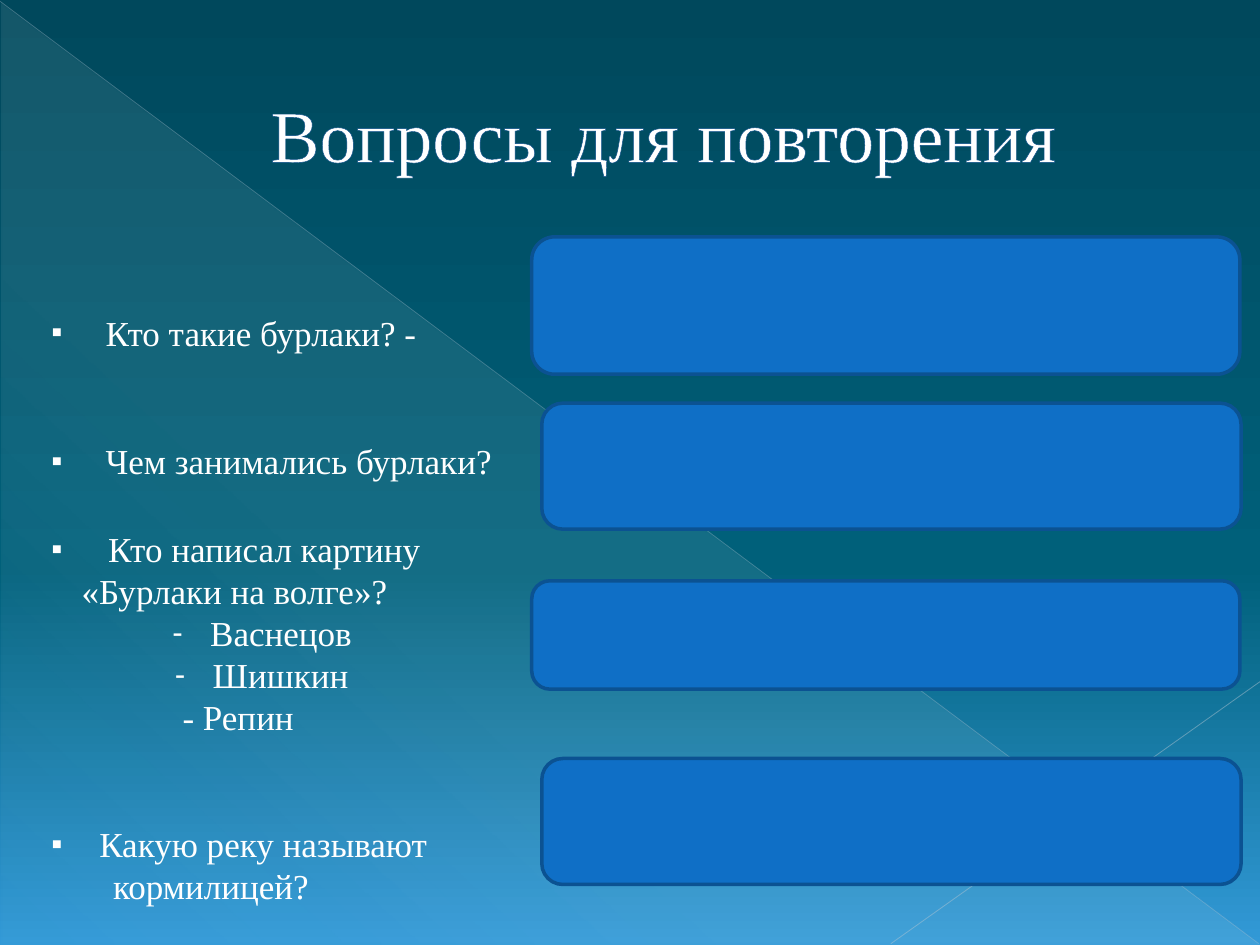
from lxml.etree import SubElement
from pptx import Presentation
from pptx.dml.color import RGBColor
from pptx.enum.shapes import MSO_CONNECTOR, MSO_SHAPE
from pptx.enum.text import MSO_ANCHOR, MSO_AUTO_SIZE, PP_ALIGN
from pptx.oxml.ns import qn
from pptx.util import Inches, Pt

WHITE = RGBColor(0xFF, 0xFF, 0xFF)
BLUE = RGBColor(0x0F, 0x6F, 0xC6)
EDGE = RGBColor(0x0B, 0x52, 0x92)
RIM = RGBColor(0x0A, 0x4D, 0x89)
NIGHT = RGBColor(0x00, 0x48, 0x5C)
TEAL = RGBColor(0x00, 0x60, 0x7A)
SKY = RGBColor(0x32, 0x99, 0xD7)
MIST = RGBColor(0xDB, 0xF5, 0xF9)
STEEL = RGBColor(0xAC, 0xC0, 0xCE)
SILVER = RGBColor(0xB5, 0xC7, 0xD3)
FONT = "Times New Roman"

# Box, then lines of (text, bullet, left margin, hanging indent)
ASKS = [
    ((0.31, 2.42, 3.36, 0.44), [("Кто такие бурлаки? -", "▪", 0.43, 0.43)]),
    ((0.31, 3.44, 3.75, 0.44), [("Чем занимались бурлаки?", "▪", 0.43, 0.43)]),
    ((0.31, 4.14, 3.52, 1.78), [
        ("Кто написал картину", "▪", 0.45, 0.45),
        ("«Бурлаки на волге»?", None, 0.24, 0),
        ("Васнецов", "-", 1.26, 0.3),
        ("Шишкин", "-", 1.28, 0.3),
        ("- Репин", None, 1.04, 0),
    ]),
    ((0.31, 6.48, 5, 0.77), [
        ("Какую реку называют", "▪", 0.38, 0.38),
        ("кормилицей?", None, 0.49, 0),
    ]),
]
CARDS = [
    (4.22, 1.88, 5.62, 1.09),
    (4.3, 3.2, 5.55, 1),
    (4.22, 4.61, 5.62, 0.86),
    (4.3, 6.02, 5.55, 1),
]


def inches(box):
    return [Inches(n) for n in box]


def fade(color, alpha):
    SubElement(color, qn("a:alpha"), val=str(alpha * 1000))


def blend(solid, stops, angle):
    """Replace a solid fill element by a gradient of (place, colour, alpha)."""
    grad = solid.makeelement(qn("a:gradFill"), {"rotWithShape": "1"})
    row = SubElement(grad, qn("a:gsLst"))
    for place, color, alpha in stops:
        stop = SubElement(row, qn("a:gs"), pos=str(place * 1000))
        tone = SubElement(stop, qn("a:srgbClr"), val=str(color))
        if alpha < 100:
            fade(tone, alpha)
    SubElement(grad, qn("a:lin"), ang=str(angle * 60000), scaled="0")
    solid.getparent().replace(solid, grad)


def add_ray(slide, ends, color, width, alpha):
    ray = slide.shapes.add_connector(MSO_CONNECTOR.STRAIGHT, *inches(ends))
    ray.line.color.rgb = color
    ray.line.width = Pt(width)
    props = ray.element.spPr
    fade(props.find(".//" + qn("a:srgbClr")), alpha)
    SubElement(props, qn("a:effectLst"))


def add_scene(slide, box):
    slide.background.fill.solid()
    back = slide.element.find(".//" + qn("p:bgPr"))
    blend(back.find(qn("a:solidFill")),
          [(0, NIGHT, 100), (60, TEAL, 100), (100, SKY, 100)], 90)
    left, top, width, height = box
    right, base = left + width, top + height
    wedge = slide.shapes.add_shape(
        MSO_SHAPE.RIGHT_TRIANGLE,
        *inches((left + 0.01, top + 0.02, width - 0.01, height - 0.02)))
    wedge.shadow.inherit = False
    wedge.line.fill.background()
    wedge.fill.solid()
    blend(wedge.element.spPr.find(qn("a:solidFill")),
          [(0, MIST, 10), (70, MIST, 8), (100, MIST, 1)], 133)
    add_ray(slide, (left, top + 0.01, right - 0.01, base - 0.01),
            STEEL, 0.39, 35)
    add_ray(slide, (right, base - 2.09, right - 2.93, base - 0.01),
            SILVER, 0.47, 45)


def style(para, size):
    para.font.name = FONT
    para.font.size = Pt(size)
    para.font.color.rgb = WHITE


def set_title(slide, box, text):
    title = slide.shapes.title
    title.left, title.top, title.width, title.height = inches(box)
    slide.shapes.element.append(title.element)
    frame = title.text_frame
    frame.vertical_anchor = MSO_ANCHOR.MIDDLE
    para = frame.paragraphs[0]
    para.alignment = PP_ALIGN.CENTER
    props = para._p.get_or_add_pPr()
    props.set("marL", str(Inches(0.53)))
    props.set("indent", "0")
    run = para.add_run()
    run.text = text
    style(run, 42)
    rim = run._r.get_or_add_rPr().makeelement(
        qn("a:ln"), {"w": str(Pt(0.5))})
    SubElement(SubElement(rim, qn("a:solidFill")), qn("a:srgbClr"),
               val=str(RIM))
    run._r.rPr.insert(0, rim)


def indent(para, mark, margin, hang):
    props = para._p.get_or_add_pPr()
    props.set("marL", str(Inches(margin)))
    props.set("indent", str(-Inches(hang)))
    if mark:
        SubElement(props, qn("a:buSzPct"), val="90000")
        SubElement(props, qn("a:buFont"), typeface="Arial")
        SubElement(props, qn("a:buChar"), char=mark)


def add_ask(slide, box, lines):
    frame = slide.shapes.add_textbox(*inches(box)).text_frame
    frame.word_wrap = True
    frame.auto_size = MSO_AUTO_SIZE.SHAPE_TO_FIT_TEXT
    for i, (text, mark, margin, hang) in enumerate(lines):
        para = frame.add_paragraph() if i else frame.paragraphs[0]
        para.text = text
        indent(para, mark, margin, hang)
        style(para, 20)


def add_card(slide, box):
    card = slide.shapes.add_shape(MSO_SHAPE.ROUNDED_RECTANGLE, *inches(box))
    card.shadow.inherit = False
    card.fill.solid()
    card.fill.fore_color.rgb = BLUE
    card.line.color.rgb = EDGE
    card.line.width = Pt(2)


def main():
    deck = Presentation()
    deck.slide_width, deck.slide_height = Inches(10), Inches(7.5)
    slide = deck.slides.add_slide(deck.slide_layouts[5])
    add_scene(slide, (0, 0, 10, 7.5))
    set_title(slide, (0.5, 0.29, 9, 1.53), "Вопросы для повторения")
    for (box, lines), card in zip(ASKS, CARDS):
        add_ask(slide, box, lines)
        add_card(slide, card)
    deck.save("out.pptx")


if __name__ == "__main__":
    main()
